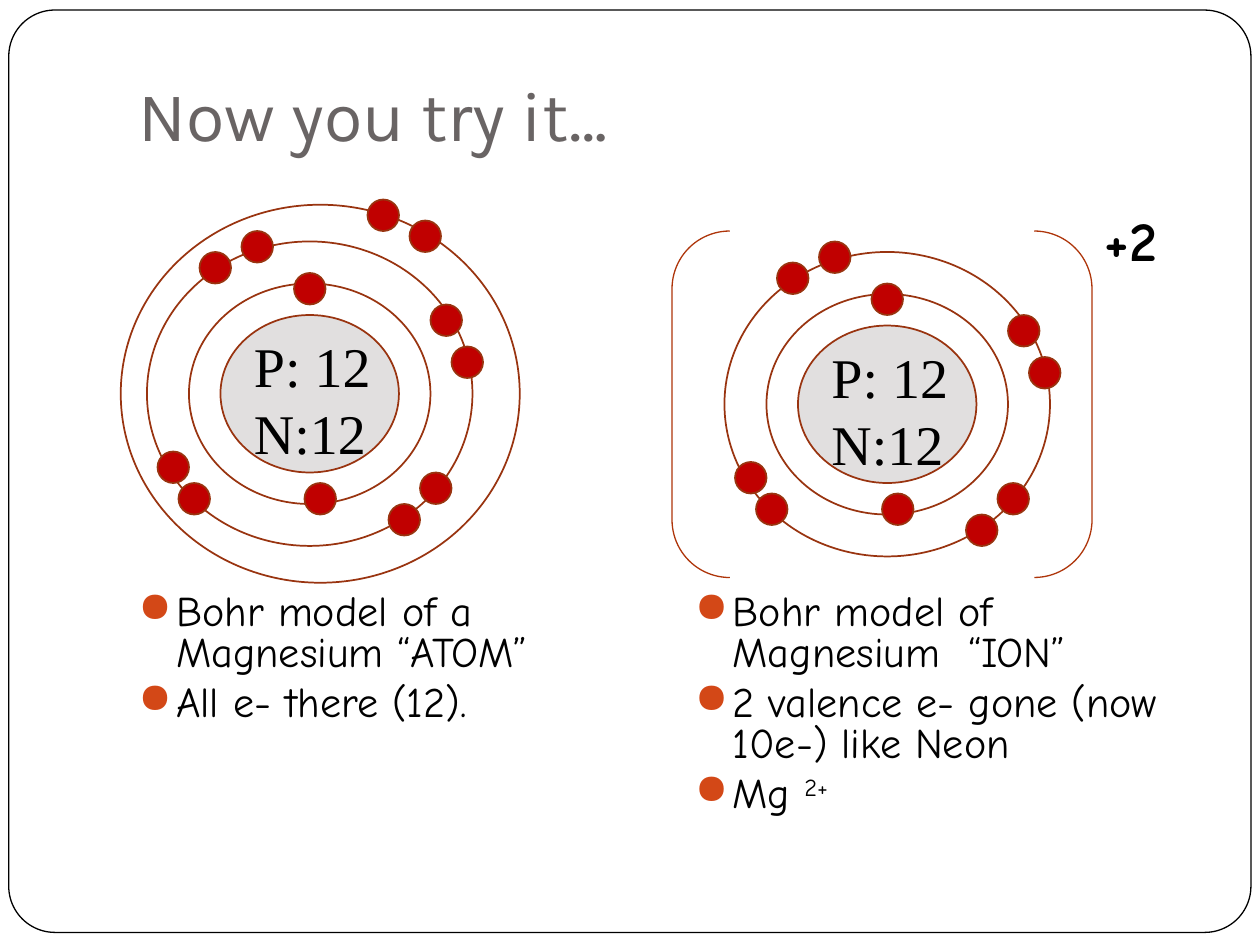
from lxml.etree import SubElement
from pptx import Presentation
from pptx.dml.color import RGBColor
from pptx.enum.shapes import MSO_SHAPE
from pptx.enum.text import MSO_ANCHOR
from pptx.oxml.ns import qn
from pptx.util import Inches, Pt

CELL = 1 / 12  # grid of 120 columns by 90 rows
RUST, RED, GREY, BLACK = "993410", "C00000", "E1DFDF", "000000"

# Shells and electrons of the atom, in cells
SHELLS = [(18, 27, 23, 21), (14, 23, 31, 29)]
OUTER = (11.5, 19.5, 38, 36)
INNER = [(28, 26), (29, 46), (43, 33), (15, 43), (41, 29),
         (17, 46), (37, 48), (40, 45), (19, 24), (23, 22)]
VALENCE = [(35, 19), (39, 21)]


def color(code):
    return RGBColor.from_string(code)


class Deck:
    def __init__(self):
        self.prs = Presentation()
        self.prs.slide_width, self.prs.slide_height = self.box(120, 90)
        self.slide = self.prs.slides.add_slide(self.prs.slide_layouts[6])

    def box(self, *cells):
        return [Inches(n * CELL) for n in cells]

    def shape(self, kind, cells, fill=None, line=RUST, width=1):
        item = self.slide.shapes.add_shape(kind, *self.box(*cells))
        item.shadow.inherit = False
        if fill:
            item.fill.solid()
            item.fill.fore_color.rgb = color(fill)
        else:
            item.fill.background()
        item.line.color.rgb = color(line)
        item.line.width = Pt(width)
        return item

    def text(self, cells, words, size, font, tint=BLACK, bold=False):
        frame = self.slide.shapes.add_textbox(*self.box(*cells)).text_frame
        frame.word_wrap = True
        frame.text = words
        for para in frame.paragraphs:
            for run in para.runs:
                self.style(run, size, font, tint, bold)
        return frame

    def style(self, run, size, font, tint=BLACK, bold=False):
        run.font.size, run.font.name, run.font.bold = Pt(size), font, bold
        run.font.color.rgb = color(tint)

    def bullets(self, cells, lines):
        frame = self.text(cells, "\n".join(lines), 24.1, "Comic Neue")
        for spot, para in enumerate(frame.paragraphs):
            para.line_spacing = 0.8
            para.space_before = Pt(5.8 if spot else 0)
            props = para._p.get_or_add_pPr()
            props.set("marL", str(Inches(0.3)))
            props.set("indent", str(-Inches(0.3)))
            tint = SubElement(props, qn("a:buClr"))
            SubElement(tint, qn("a:srgbClr")).set("val", "D34817")
            SubElement(props, qn("a:buChar")).set("char", "●")
        return frame

    def raised(self, para, words):
        run = para.add_run()
        run.text = words
        self.style(run, 24.1, "Comic Neue")
        run._r.get_or_add_rPr().set("baseline", "30000")

    def model(self, dx, dy, shells, dots):
        def move(col, row, *size):
            return (col + dx, row + dy, *size)

        self.shape(MSO_SHAPE.OVAL, move(21, 30, 17, 15), GREY)
        self.text(move(23, 31, 14, 14.2), "P: 12\nN:12", 32, "Times New Roman")
        for shell in shells:
            self.shape(MSO_SHAPE.OVAL, move(*shell))
        for dot in dots:
            self.shape(MSO_SHAPE.OVAL, move(*dot, 3, 3), RED)


def main():
    deck = Deck()

    # Frame and title
    frame = deck.shape(MSO_SHAPE.ROUNDED_RECTANGLE, (0.84, 0.96, 118.3, 87.84),
                       "FFFFFF", BLACK, 0.75)
    frame.adjustments[0] = 0.05
    title = deck.text((12, 3.6, 102, 12.4), "Now you try it…", 40, "Karla", "696464")
    title.vertical_anchor = MSO_ANCHOR.BOTTOM
    title.margin_bottom = Inches(0.1)

    # Notes under each model
    deck.bullets((12, 56, 44, 21),
                 ["Bohr model of a Magnesium “ATOM”", "All e- there (12)."])
    notes = deck.bullets((65, 56, 49.2, 24),
                         ["Bohr model of Magnesium  “ION”",
                          "2 valence e- gone (now 10e-) like Neon", "Mg "])
    deck.raised(notes.paragraphs[-1], "2+")

    # Atom, then the ion without its outer shell
    deck.model(0, 0, SHELLS + [OUTER], INNER + VALENCE)
    deck.model(55, 1, SHELLS, INNER)

    # Ion charge and brackets
    deck.text((104, 19, 16, 7.7), "+2", 32, "Comic Neue", bold=True)
    deck.shape(MSO_SHAPE.DOUBLE_BRACKET, (64, 22, 40, 33), line="AE350A", width=0.75)

    deck.prs.save("out.pptx")


if __name__ == "__main__":
    main()
